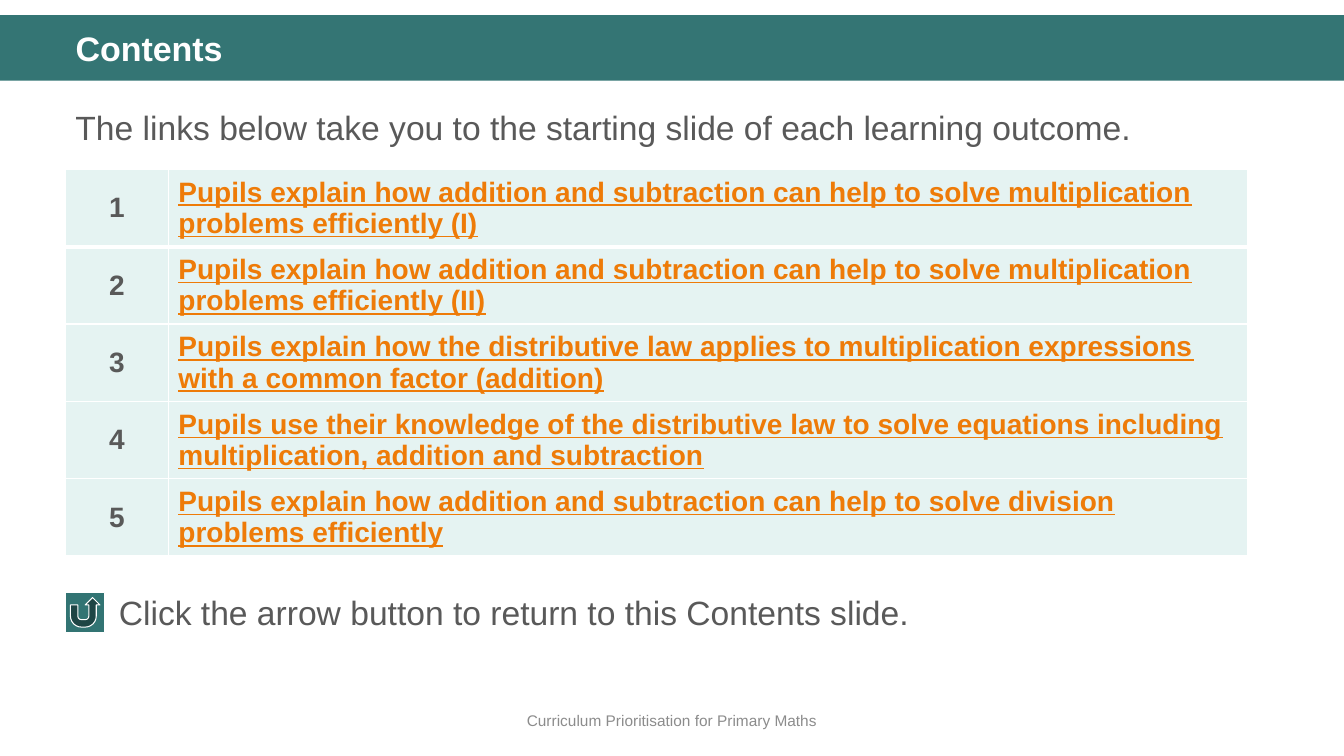
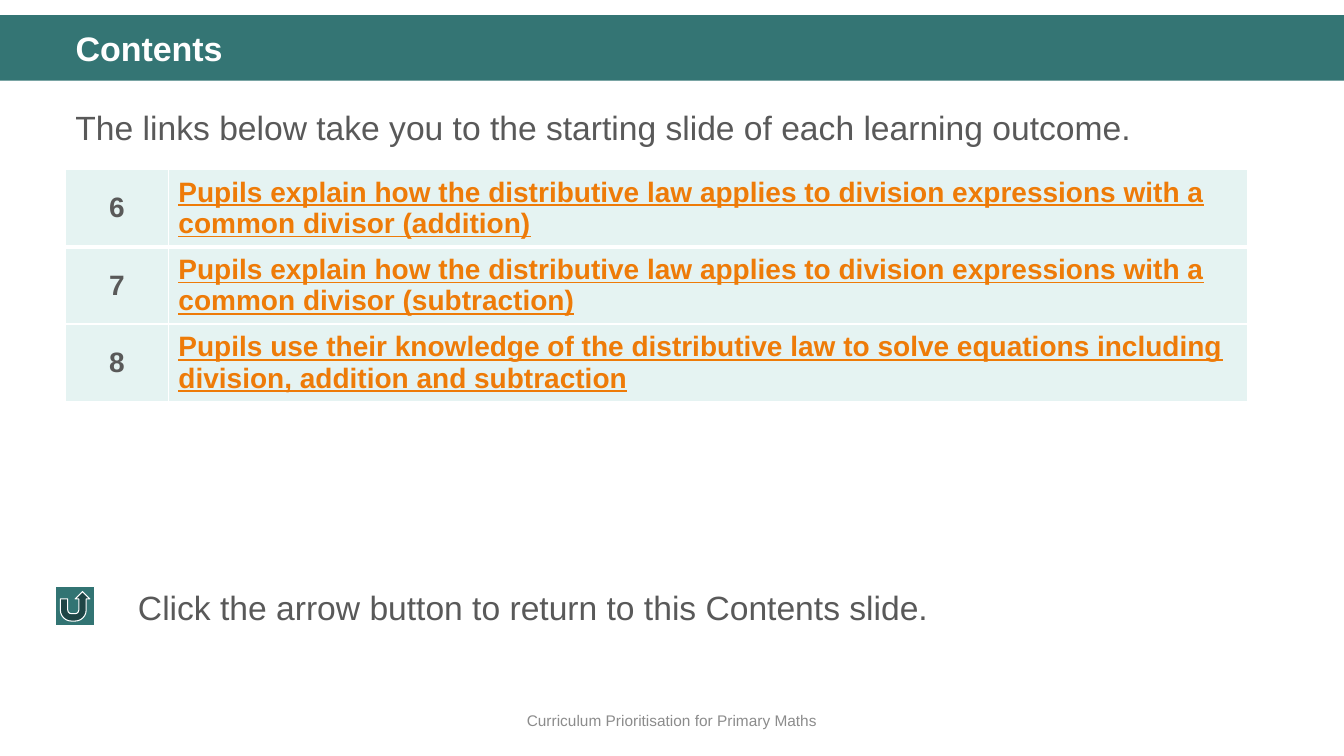
from dataclasses import dataclass

from lxml import etree
from pptx import Presentation
from pptx.dml.color import RGBColor
from pptx.enum.shapes import MSO_SHAPE
from pptx.enum.text import MSO_ANCHOR, MSO_AUTO_SIZE, PP_ALIGN
from pptx.oxml.ns import qn
from pptx.util import Inches, Pt

RECTANGLE = MSO_SHAPE.RECTANGLE
RETURN_BUTTON = MSO_SHAPE.ACTION_BUTTON_RETURN
TOP, MIDDLE = MSO_ANCHOR.TOP, MSO_ANCHOR.MIDDLE
LEFT, CENTER = PP_ALIGN.LEFT, PP_ALIGN.CENTER
NO_AUTOFIT = MSO_AUTO_SIZE.NONE

FONT = "Arial"
BAND, BUTTON, CELL = "347574", "327473", "E5F3F2"
WHITE, BODY, LINK, MUTED = "FFFFFF", "595959", "EE7B08", "8C8C8C"
SLIDE_WIDTH, MARGIN, TEXT_WIDTH = 13.33, 0.65, 12.18
COLUMN_WIDTHS = (1.02, 10.7)
ROW_HEIGHT = 0.72
THIN, THICK = 1, 3

TITLE = "Contents"
INTRO = "The links below take you to the starting slide of each learning outcome."
RETURN_NOTE = "Click the arrow button to return to this Contents slide."
FOOTER = "Curriculum Prioritisation for Primary Maths"


@dataclass(frozen=True)
class ContentsPage:
    first_number: int
    outcomes: tuple[str, ...]
    button_at: tuple[float, float]
    note_at: tuple[float, float]


PAGES = (
    ContentsPage(
        1,
        (
            "Pupils explain how addition and subtraction can help to solve multiplication problems efficiently (I)",
            "Pupils explain how addition and subtraction can help to solve multiplication problems efficiently (II)",
            "Pupils explain how the distributive law applies to multiplication expressions with a common factor (addition)",
            "Pupils use their knowledge of the distributive law to solve equations including multiplication, addition and subtraction",
            "Pupils explain how addition and subtraction can help to solve division problems efficiently",
        ),
        (0.65, 5.88),
        (1.08, 5.82),
    ),
    ContentsPage(
        6,
        (
            "Pupils explain how the distributive law applies to division expressions with a common divisor (addition)",
            "Pupils explain how the distributive law applies to division expressions with a common divisor (subtraction)",
            "Pupils use their knowledge of the distributive law to solve equations including division, addition and subtraction",
        ),
        (0.55, 5.82),
        (1.27, 5.77),
    ),
)


def color(value: str) -> RGBColor:
    return RGBColor.from_string(value)


def write(frame, text: str, size: float, ink: str, bold: bool = False,
          align=LEFT, spacing: float = 1.0, underline: bool = False) -> None:
    frame.text = text
    para = frame.paragraphs[0]
    para.alignment = align
    para.line_spacing = spacing
    for span in para.runs:
        span.font.name = FONT
        span.font.size = Pt(size)
        span.font.bold = bold
        span.font.underline = underline
        span.font.color.rgb = color(ink)


def add_text(page, left: float, top: float, width: float, height: float,
             text: str, size: float, ink: str, anchor=TOP, **style) -> None:
    box = page.shapes.add_textbox(Inches(left), Inches(top), Inches(width), Inches(height))
    frame = box.text_frame
    frame.word_wrap = True
    frame.vertical_anchor = anchor
    write(frame, text, size, ink, **style)


def add_band(page) -> None:
    """Draw the title band and move it to the layout, behind every title."""
    band = page.shapes.add_shape(RECTANGLE, 0, Inches(0.15), Inches(SLIDE_WIDTH), Inches(0.65))
    band.shadow.inherit = False
    band.fill.solid()
    band.fill.fore_color.rgb = color(BAND)
    band.line.fill.background()
    page.slide_layout.shapes._spTree.insert(2, band._element)


def format_title(page) -> None:
    title = page.shapes.title
    title.left, title.top = Inches(MARGIN), Inches(0.27)
    title.width, title.height = Inches(TEXT_WIDTH), Inches(0.47)
    frame = title.text_frame
    frame.auto_size = NO_AUTOFIT
    frame.vertical_anchor = TOP
    write(frame, TITLE, 24.3, WHITE, bold=True, spacing=0.9)


def set_borders(cell, top: float, bottom: float) -> None:
    properties = cell._tc.get_or_add_tcPr()
    edges = (("a:lnL", THIN), ("a:lnR", THIN), ("a:lnT", top), ("a:lnB", bottom))
    for position, (tag, width) in enumerate(edges):
        line = etree.Element(qn(tag), w=str(Pt(width)))
        fill = etree.SubElement(line, qn("a:solidFill"))
        etree.SubElement(fill, qn("a:srgbClr"), val=WHITE)
        properties.insert(position, line)


def add_outcomes(page, first_number: int, outcomes: tuple[str, ...]) -> None:
    count = len(outcomes)
    table = page.shapes.add_table(
        count, 2, Inches(MARGIN), Inches(1.68),
        Inches(sum(COLUMN_WIDTHS)), Inches(ROW_HEIGHT * count)).table
    for column, width in zip(table.columns, COLUMN_WIDTHS):
        column.width = Inches(width)
    for index, outcome in enumerate(outcomes):
        table.rows[index].height = Inches(ROW_HEIGHT)
        number_cell, outcome_cell = table.cell(index, 0), table.cell(index, 1)
        write(number_cell.text_frame, str(first_number + index), 20, BODY, bold=True, align=CENTER)
        write(outcome_cell.text_frame, outcome, 20, LINK, bold=True, underline=True)
        for cell in (number_cell, outcome_cell):
            cell.vertical_anchor = MIDDLE
            cell.fill.solid()
            cell.fill.fore_color.rgb = color(CELL)
            set_borders(cell, THICK if index == 1 else THIN, THICK if index == 0 else THIN)


def add_return_button(page, left: float, top: float) -> None:
    button = page.shapes.add_shape(
        RETURN_BUTTON, Inches(left), Inches(top), Inches(0.39), Inches(0.39))
    button.shadow.inherit = False
    button.fill.solid()
    button.fill.fore_color.rgb = color(BUTTON)
    button.line.color.rgb = color(WHITE)
    button.line.width = Pt(0.75)


def build_page(page, contents: ContentsPage) -> None:
    format_title(page)
    add_text(page, 0, 6.95, SLIDE_WIDTH, 0.4, FOOTER, 11, MUTED, anchor=MIDDLE, align=CENTER)
    add_text(page, MARGIN, 0.93, TEXT_WIDTH, 0.6, INTRO, 24, BODY, spacing=1.2)
    add_outcomes(page, contents.first_number, contents.outcomes)
    add_return_button(page, *contents.button_at)
    add_text(page, *contents.note_at, 11.32, 0.5, RETURN_NOTE, 24, BODY)


def main() -> None:
    deck = Presentation()
    deck.slide_width, deck.slide_height = Inches(SLIDE_WIDTH), Inches(7.5)
    title_only = deck.slide_layouts[5]
    for contents in PAGES:
        build_page(deck.slides.add_slide(title_only), contents)
    add_band(deck.slides[0])
    deck.save("out.pptx")


if __name__ == "__main__":
    main()
